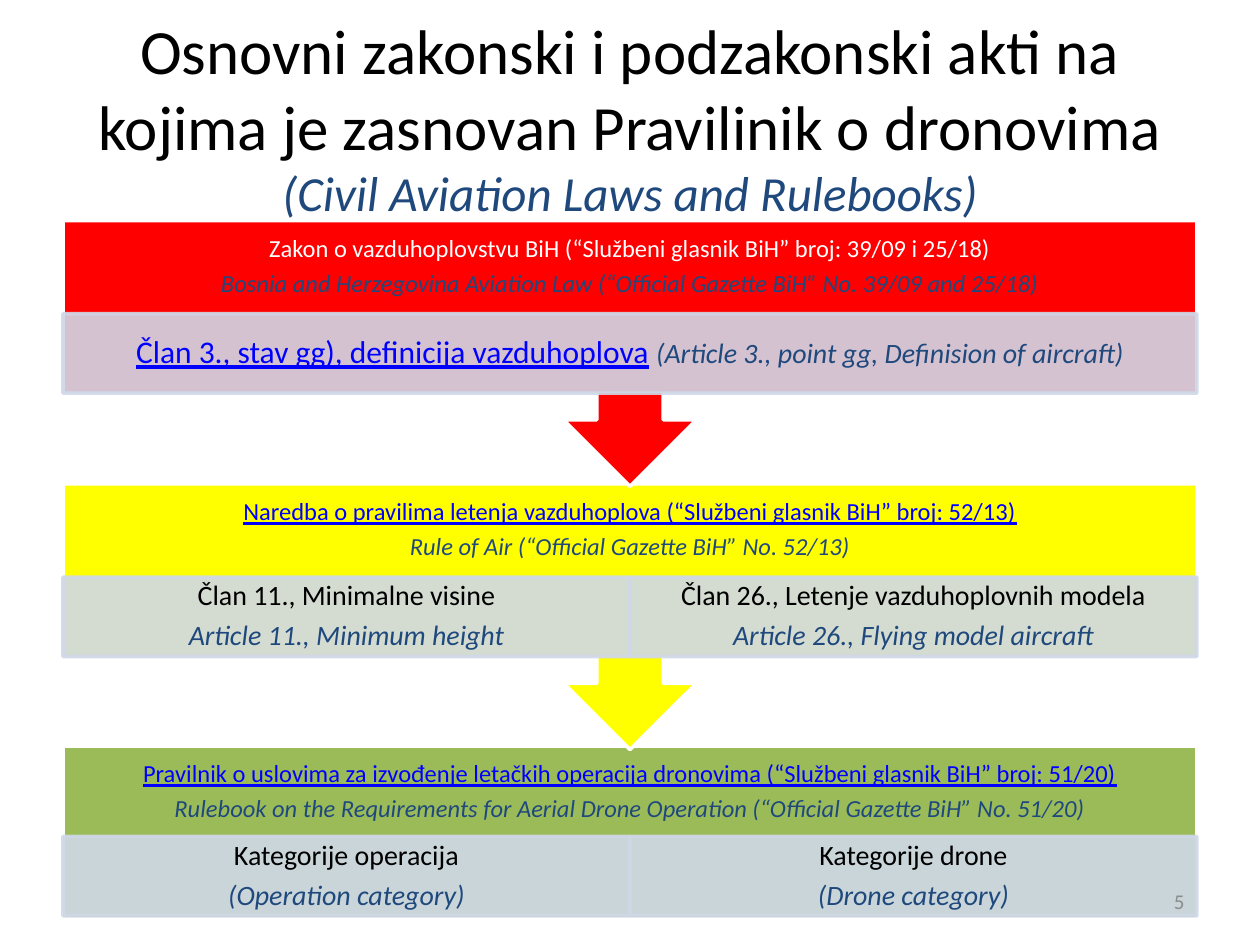
from pptx import Presentation
from pptx.dml.color import RGBColor
from pptx.enum.shapes import MSO_SHAPE as SHAPE
from pptx.enum.text import MSO_ANCHOR as ANCHOR, PP_ALIGN as ALIGN
from pptx.oxml.ns import qn
from pptx.util import Pt
from lxml.etree import SubElement

FONT = "Calibri"
BLACK, WHITE, NAVY, LINK, GRAY, PALE = (
    "000000", "FFFFFF", "1F497D", "0000FF", "8C8C8C", "D0D8E8")
LEFT, WIDTH = 36, 648
HEAD_H, CELL_H, CALLOUT_H, LAST_H = 53.3, 45.4, 151.9, 98.6

LEVELS = [
    (126, "FF0000", 53.3, WHITE,
     "Zakon o vazduhoplovstvu BiH (“Službeni glasnik BiH” broj: 39/09 i 25/18)",
     "Bosnia and Herzegovina Aviation Law (“Official Gazette BiH” No. 39/09 and 25/18)",
     []),
    (276.5, "FFFF00", 53.3, LINK,
     "Naredba o pravilima letenja vazduhoplova (“Službeni glasnik BiH” broj: 52/13)",
     "Rule of Air (“Official Gazette BiH” No. 52/13)",
     [("Član 11., Minimalne visine", "Article 11., Minimum height"),
      ("Član 26., Letenje vazduhoplovnih modela", "Article 26., Flying model aircraft")]),
    (426.2, "9BBB59", 51.8, LINK,
     "Pravilnik o uslovima za izvođenje letačkih operacija dronovima (“Službeni glasnik BiH” broj: 51/20)",
     "Rulebook on the Requirements for Aerial Drone Operation (“Official Gazette BiH” No. 51/20)",
     [("Kategorije operacija", "(Operation category)"),
      ("Kategorije drone", "(Drone category)")]),
]


def rgb(color):
    return RGBColor.from_string(color)


def style(r, size, color, italic=False):
    r.font.name = FONT
    r.font.size = Pt(size)
    r.font.italic = italic
    r.font.underline = color == LINK
    r.font.color.rgb = rgb(color)


def set_frame(tf, dx, dy):
    tf.word_wrap = True
    tf.vertical_anchor = ANCHOR.MIDDLE
    tf.margin_left = tf.margin_right = Pt(dx)
    tf.margin_top = tf.margin_bottom = Pt(dy)


def set_spacing(p, size):
    p.alignment = ALIGN.CENTER
    p.line_spacing = 0.9
    p.space_after = Pt(round(size * 0.35, 1))


def set_pair(tf, local, english, size, color):
    tf.text = f"{local}\n{english}"
    for p, c in zip(tf.paragraphs, (color, NAVY)):
        set_spacing(p, size)
        style(p.runs[0], size, c, c == NAVY)


def add_box(s, kind, x, y, w, h, fill, line, alpha=None):
    sp = s.shapes.add_shape(kind, Pt(x), Pt(y), Pt(w), Pt(h))
    sp.shadow.inherit = False
    sp.fill.solid()
    sp.fill.fore_color.rgb = rgb(fill)
    sp.line.color.rgb = rgb(line)
    sp.line.width = Pt(2)
    if alpha:
        for clr in sp._element.spPr.iter(qn("a:srgbClr")):
            SubElement(clr, qn("a:alpha")).set("val", str(alpha * 1000))
    return sp


def add_text(s, x, y, w, h, dx, dy):
    tf = s.shapes.add_textbox(Pt(x), Pt(y), Pt(w), Pt(h)).text_frame
    set_frame(tf, dx, dy)
    return tf


def add_title(s):
    sp = s.shapes.title
    sp.left, sp.top, sp.width, sp.height = Pt(36), Pt(21.6), Pt(648), Pt(90)
    tf = sp.text_frame
    set_frame(tf, 7.2, 3.6)
    p = tf.paragraphs[0]
    p.text = ("Osnovni zakonski i podzakonski akti na kojima je zasnovan "
              "Pravilinik o dronovima\v(Civil Aviation Laws and Rulebooks)")
    p.alignment = ALIGN.CENTER
    style(p.runs[0], 36, BLACK)
    style(p.runs[1], 28, NAVY, True)


def add_cell(s, x, y, w, dx, dy):
    sp = add_box(s, SHAPE.RECTANGLE, x, y, w, CELL_H, PALE, PALE, 90)
    set_frame(sp.text_frame, dx, dy)
    return sp.text_frame


def add_level(s, top, fill, offset, color, local, english, cells):
    if top == LEVELS[-1][0]:
        add_box(s, SHAPE.RECTANGLE, LEFT, top, WIDTH, LAST_H, fill, WHITE)
    else:
        sp = add_box(s, SHAPE.UP_ARROW_CALLOUT, LEFT, top, WIDTH, CALLOUT_H, fill, WHITE)
        sp.rotation = 180
    tf = add_text(s, LEFT, top, WIDTH, HEAD_H, 8, 8)
    set_pair(tf, local, english, 14, color)
    for i, (name, translation) in enumerate(cells):
        w = WIDTH / len(cells)
        tf = add_cell(s, LEFT + i * w, top + offset, w, 9, 1.6)
        set_pair(tf, name, translation, 16, BLACK)


def add_definition(s, top):
    p = add_cell(s, LEFT, top, WIDTH, 10, 2).paragraphs[0]
    set_spacing(p, 18)
    for text, size, color in [
        ("Član 3., stav gg), definicija vazduhoplova", 18, LINK),
        (" ", 18, BLACK),
        ("(Article 3., point gg, Definision of aircraft)", 16, NAVY),
    ]:
        r = p.add_run()
        r.text = text
        style(r, size, color, color == NAVY)


def add_number(s):
    p = add_text(s, 516, 500.4, 168, 28.8, 7.2, 3.6).paragraphs[0]
    p.text = "5"
    p.alignment = ALIGN.RIGHT
    style(p.runs[0], 12, GRAY)


def main():
    prs = Presentation()
    prs.slide_width, prs.slide_height = Pt(720), Pt(540)
    s = prs.slides.add_slide(prs.slide_layouts[5])
    add_title(s)
    for level in reversed(LEVELS):
        add_level(s, *level)
    add_definition(s, LEVELS[0][0] + LEVELS[0][2])
    add_number(s)
    prs.save("out.pptx")


if __name__ == "__main__":
    main()
